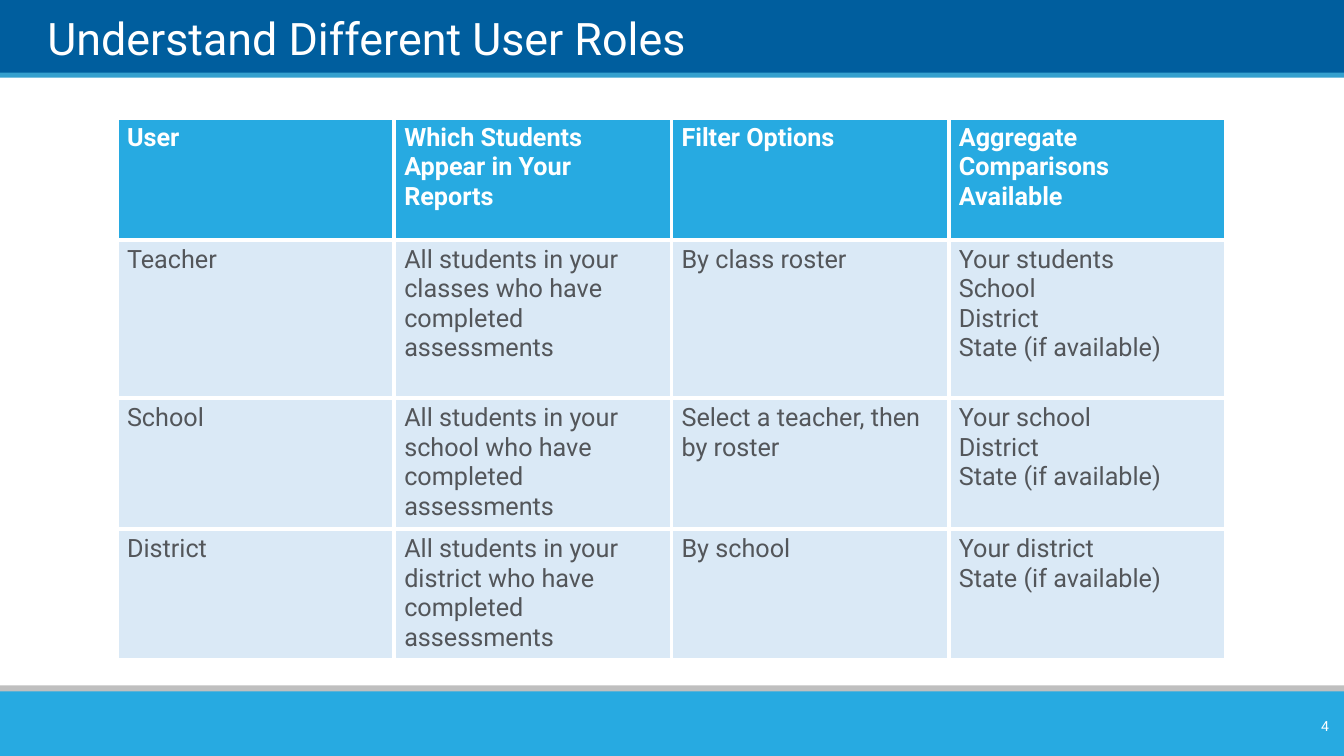
"""Build a slide with a table of user roles."""
import pptx
import pptx.util
import pptx.dml.color
import pptx.enum.shapes
import pptx.enum.text
import pptx.oxml
import pptx.oxml.ns

UNIT = pptx.util.Inches(0.01)
WIDE, HIGH = 1333, 750
FONT = "Roboto"
HUES = {
    "navy": "005E9E",
    "line": "35A0CE",
    "gray": "BFBFBF",
    "sky": "27AAE1",
    "pale": "DAE9F6",
    "ink": "53565A",
    "white": "FFFFFF",
}
STATE = "State (if available)"
HEAD = ["User", "Which Students Appear in Your Reports", "Filter Options",
        "Aggregate Comparisons Available"]
ROLES = [
    ("Teacher", "classes", "By class roster",
     ["Your students", "School", "District", STATE]),
    ("School", "school", "Select a teacher, then by roster",
     ["Your school", "District", STATE]),
    ("District", "district", "By school", ["Your district", STATE]),
]
ROWS = [121, 157, 121, 85]
COL = 275


def hue(name):
    return pptx.dml.color.RGBColor.from_string(HUES[name])


def grid(*cells):
    return [cell * UNIT for cell in cells]


def paint(item, name):
    item.fill.solid()
    item.fill.fore_color.rgb = hue(name)


def write(frame, text, size=18, color="white", bold=False, align="LEFT"):
    frame.text = text
    for para in frame.paragraphs:
        para.alignment = getattr(pptx.enum.text.PP_ALIGN, align)
        for run in para.runs:
            run.font.name = FONT
            run.font.size = pptx.util.Pt(size)
            run.font.bold = bold
            run.font.color.rgb = hue(color)


def band(slide, top, high, color):
    kind = pptx.enum.shapes.MSO_SHAPE.RECTANGLE
    shape = slide.shapes.add_shape(kind, *grid(0, top, WIDE, high))
    shape.shadow.inherit = False
    paint(shape, color)
    shape.line.fill.background()


def label(slide, place, text, anchor, inset=None, **style):
    frame = slide.shapes.add_textbox(*grid(*place)).text_frame
    frame.word_wrap = True
    frame.vertical_anchor = getattr(pptx.enum.text.MSO_ANCHOR, anchor)
    if inset is not None:
        frame.margin_left = frame.margin_right = inset
        frame.margin_top = frame.margin_bottom = inset
    write(frame, text, **style)


def border(cell, color="white", size=3):
    props = cell._tc.get_or_add_tcPr()
    space = pptx.oxml.ns.nsdecls("a")
    for side in "LRTB":
        props.append(pptx.oxml.parse_xml(
            f'<a:ln{side} {space} w="{pptx.util.Pt(size)}"><a:solidFill>'
            f'<a:srgbClr val="{HUES[color]}"/></a:solidFill></a:ln{side}>'))


def table(slide, left, top, data):
    place = grid(left, top, COL * len(HEAD), sum(ROWS))
    body = slide.shapes.add_table(len(data), len(HEAD), *place).table
    for col in body.columns:
        col.width = COL * UNIT
    for row, high in zip(body.rows, ROWS):
        row.height = high * UNIT
    for r, line in enumerate(data):
        first = r == 0
        for c, text in enumerate(line):
            cell = body.cell(r, c)
            border(cell)
            paint(cell, "sky" if first else "pale")
            write(cell.text_frame, text, bold=first,
                  color="white" if first else "ink")


def main():
    deck = pptx.Presentation()
    deck.slide_width, deck.slide_height = grid(WIDE, HIGH)
    slide = deck.slides.add_slide(deck.slide_layouts[6])
    band(slide, -1, 75, "navy")
    band(slide, 72, 5, "line")
    band(slide, 680, 14, "gray")
    band(slide, 686, 64, "sky")
    label(slide, (47, 7, 1243, 57), "Understand Different User Roles",
          "BOTTOM", inset=0, size=32)
    data = [HEAD]
    for user, group, sift, views in ROLES:
        who = f"All students in your {group} who have completed assessments"
        data.append([user, who, sift, "\n".join(views)])
    table(slide, 116, 117, data)
    label(slide, (1251, 705, 77, 30), "4", "MIDDLE", size=10, align="RIGHT")
    deck.save("out.pptx")


if __name__ == "__main__":
    main()
